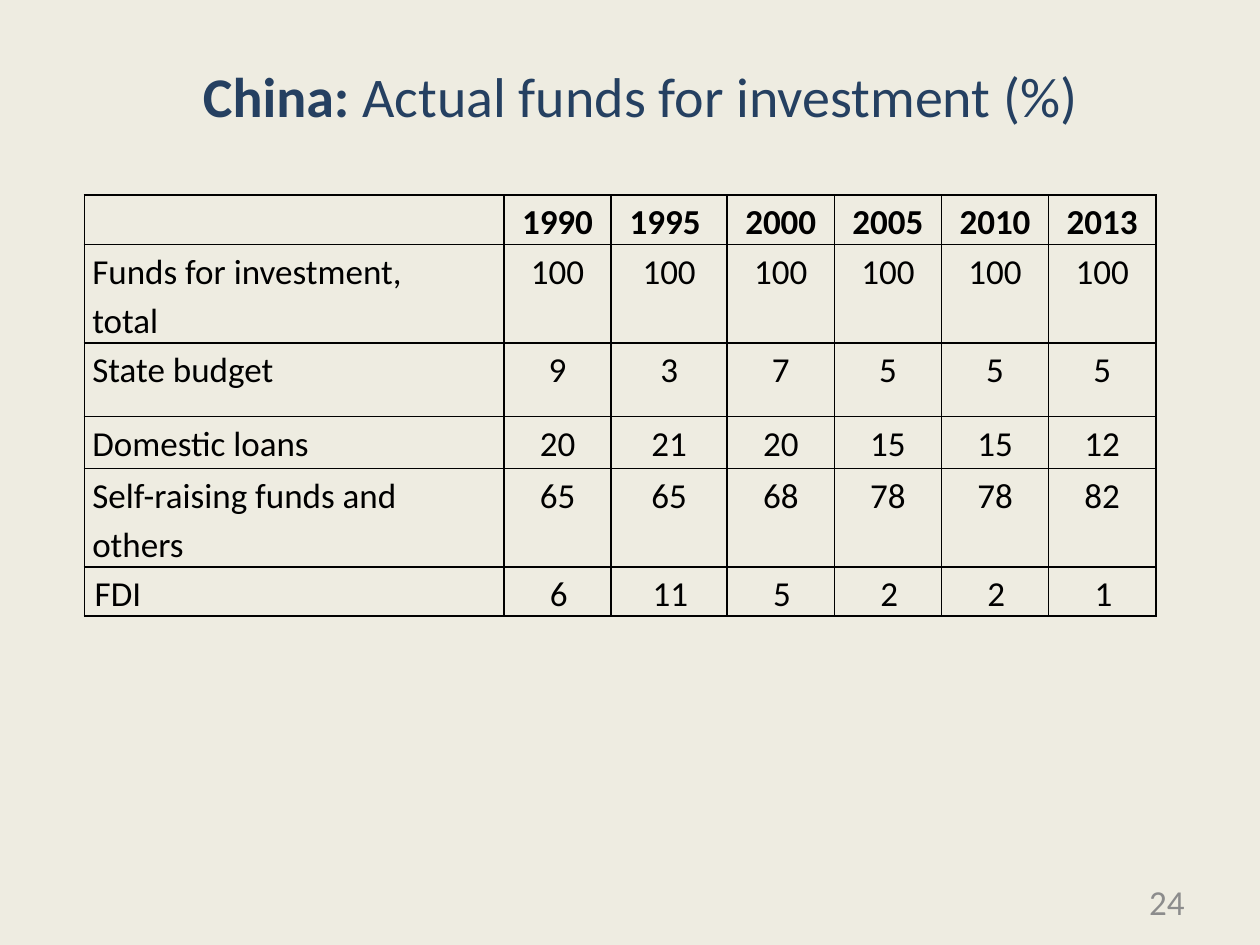
"""Build a slide with a table of China's investment funds by source."""
from lxml.etree import SubElement
from pptx import Presentation
from pptx.dml.color import RGBColor
from pptx.enum.text import MSO_ANCHOR, PP_ALIGN
from pptx.oxml import parse_xml
from pptx.oxml.ns import nsdecls
from pptx.util import Cm, Pt

NAVY = RGBColor(0x25, 0x40, 0x61)
BLACK = RGBColor(0, 0, 0)
GREY = RGBColor(0x8C, 0x8C, 0x8C)
CREAM = RGBColor(0xEE, 0xEC, 0xE1)

ROWS = [
    ("", "1990", "1995 ", "2000", "2005", "2010", "2013"),
    ("Funds for investment,\ntotal", "100", "100", "100", "100", "100", "100"),
    ("State budget", "9", "3", "7", "5", "5", "5"),
    ("Domestic loans", "20", "21", "20", "15", "15", "12"),
    ("Self-raising funds and\nothers", "65", "65", "68", "78", "78", "82"),
    ("FDI", "6", "11", "5", "2", "2", "1"),
]
WIDTHS = [8.46, 2.16, 2.34, 2.16, 2.16, 2.16, 2.16]
HEIGHTS = [0.99, 1.98, 1.49, 1.04, 1.98, 0.99]


def add_run(para, text, size, color, bold=False):
    run = para.add_run()
    run.text = text
    font = run.font
    font.name, font.size, font.bold = "Calibri", Pt(size), bold
    font.color.rgb = color


def add_border(cell):
    props = cell._tc.get_or_add_tcPr()
    for pos, side in enumerate("LRTB"):
        line = parse_xml(
            f'<a:ln{side} {nsdecls("a")} w="12700"><a:solidFill>'
            f'<a:srgbClr val="{BLACK}"/></a:solidFill></a:ln{side}>')
        props.insert(pos, line)


deck = Presentation()
deck.slide_width, deck.slide_height = Cm(25.4), Cm(19.05)
slide = deck.slides.add_slide(deck.slide_layouts[5])
slide.background.fill.solid()
slide.background.fill.fore_color.rgb = CREAM

title = slide.shapes.title
title.left, title.top, title.width, title.height = Cm(1.27), Cm(0.71), Cm(23.29), Cm(2.41)
title.text_frame.vertical_anchor = MSO_ANCHOR.MIDDLE
para = title.text_frame.paragraphs[0]
para.alignment = PP_ALIGN.CENTER
add_run(para, "China: ", 32, NAVY, True)
add_run(para, "Actual funds for investment (%)", 32, NAVY)

frame = slide.shapes.add_table(
    len(ROWS), len(WIDTHS), Cm(1.7), Cm(3.93), Cm(sum(WIDTHS)), Cm(sum(HEIGHTS)))
table = frame.table
table.first_row = table.horz_banding = False
for col, width in zip(table.columns, WIDTHS):
    col.width = Cm(width)
for row, height in zip(table.rows, HEIGHTS):
    row.height = Cm(height)

for r, row in enumerate(ROWS):
    for c, text in enumerate(row):
        cell = table.cell(r, c)
        cell.margin_left = cell.margin_right = Cm(0.16)
        cell.margin_top = cell.margin_bottom = 0
        cell.fill.background()
        add_border(cell)
        if not text:
            continue
        for n, line in enumerate(text.split("\n")):
            body = cell.text_frame
            para = body.add_paragraph() if n else body.paragraphs[0]
            para.line_spacing = 1.15
            if c:
                para.alignment = PP_ALIGN.CENTER
                para.space_after = Pt(10)
            if row[0] == "FDI":
                para._p.get_or_add_pPr().set("indent", str(Cm(0.05)))
            add_run(para, line, 20, BLACK, r == 0)

box = slide.shapes.add_textbox(Cm(18.2), Cm(17.66), Cm(5.93), Cm(1.01))
box.text_frame.word_wrap = True
box.text_frame.vertical_anchor = MSO_ANCHOR.MIDDLE
para = box.text_frame.paragraphs[0]
para.alignment = PP_ALIGN.RIGHT
add_run(para, "24", 20, GREY)

deck.save("out.pptx")
